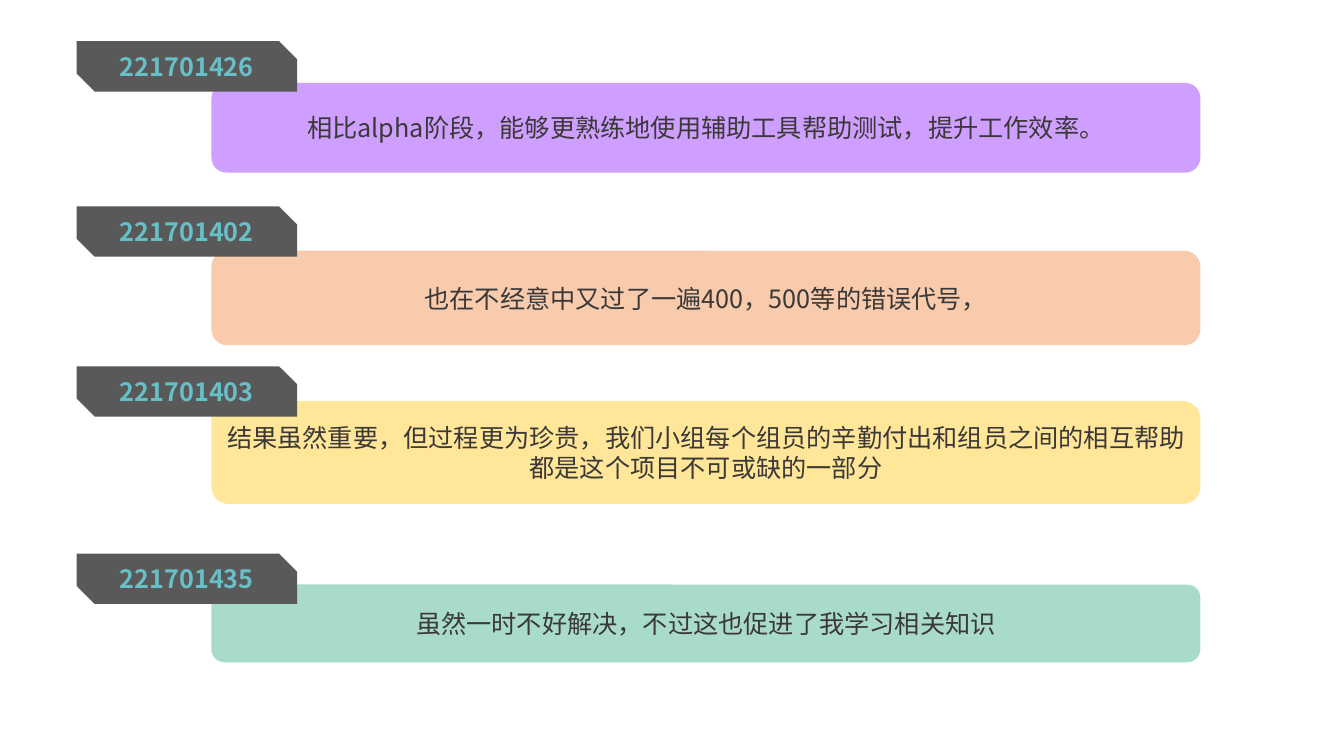
from lxml.etree import SubElement
from pptx import Presentation
from pptx.dml.color import RGBColor
from pptx.enum.shapes import MSO_SHAPE
from pptx.enum.text import MSO_ANCHOR, PP_ALIGN
from pptx.oxml.ns import qn
from pptx.util import Cm, Pt

FONT = "Noto Sans CJK SC"
COLOURS = {
    "tag": "595959",
    "tag text": "67C0C7",
    "message text": "3B3838",
    "purple": "CF9FFF",
    "peach": "F8CBAD",
    "yellow": "FFE699",
    "green": "A9DBCC",
}
# Member number, tag top, message top, message height (cm), colour, message
MEMBERS = [
    ("221701426", 1.04, 2.09, 2.26, "purple",
     "相比alpha阶段，能够更熟练地使用辅助工具帮助测试，提升工作效率。"),
    ("221701402", 5.2, 6.32, 2.38, "peach",
     "也在不经意中又过了一遍400，500等的错误代号，"),
    ("221701403", 9.23, 10.11, 2.59, "yellow",
     "结果虽然重要，但过程更为珍贵，我们小组每个组员的辛勤付出和组员之间的相互帮助"
     "都是这个项目不可或缺的一部分"),
    ("221701435", 13.95, 14.73, 1.96, "green",
     "虽然一时不好解决，不过这也促进了我学习相关知识"),
]


def add_label(slide, preset, left, top, width, height, fill, text, text_colour, bold=False):
    """Add a borderless filled shape with one centred line of text."""
    shape = slide.shapes.add_shape(preset, Cm(left), Cm(top), Cm(width), Cm(height))
    shape.shadow.inherit = False
    shape.fill.solid()
    shape.fill.fore_color.rgb = RGBColor.from_string(COLOURS[fill])
    shape.line.fill.background()
    shape.text_frame.word_wrap = True
    shape.text_frame.vertical_anchor = MSO_ANCHOR.MIDDLE
    paragraph = shape.text_frame.paragraphs[0]
    paragraph.alignment = PP_ALIGN.CENTER
    run = paragraph.add_run()
    run.text = text
    run.font.size = Pt(18)
    run.font.bold = bold
    run.font.color.rgb = RGBColor.from_string(COLOURS[text_colour])
    run.font.name = FONT
    SubElement(run.font._element, qn("a:ea"), typeface=FONT)
    return shape


def add_message(slide, top, height, fill, text):
    add_label(slide, MSO_SHAPE.ROUNDED_RECTANGLE, 5.33, top, 24.92, height,
              fill, text, "message text")


def add_tag(slide, top, number):
    tag = add_label(slide, MSO_SHAPE.SNIP_2_DIAG_RECTANGLE, 1.93, top, 5.56, 1.27,
                    "tag", number, "tag text", bold=True)
    tag.adjustments[0] = 0
    tag.adjustments[1] = 0.36


def main():
    presentation = Presentation()
    presentation.slide_width = Cm(33.87)
    presentation.slide_height = Cm(19.05)
    slide = presentation.slides.add_slide(presentation.slide_layouts[6])
    for number, tag_top, message_top, height, colour, message in MEMBERS:
        add_message(slide, message_top, height, colour, message)
        add_tag(slide, tag_top, number)
    presentation.save("out.pptx")


if __name__ == "__main__":
    main()
